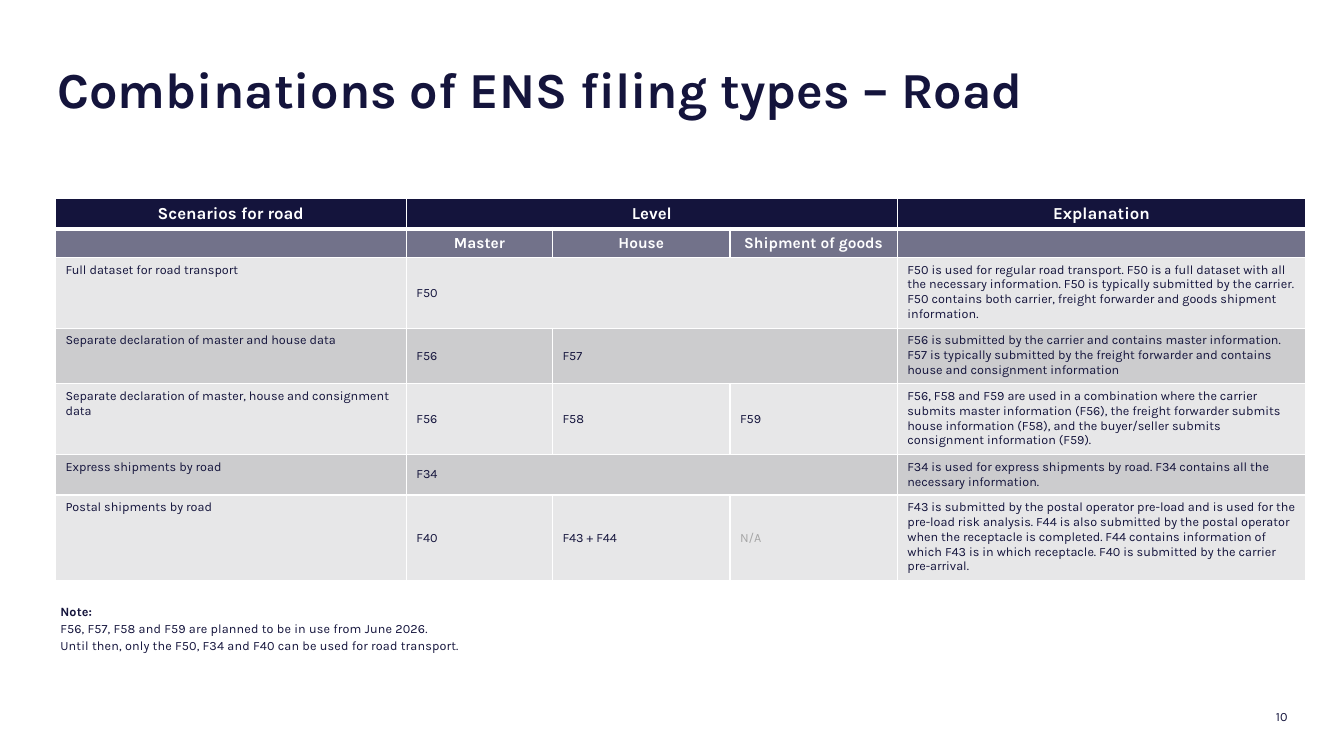
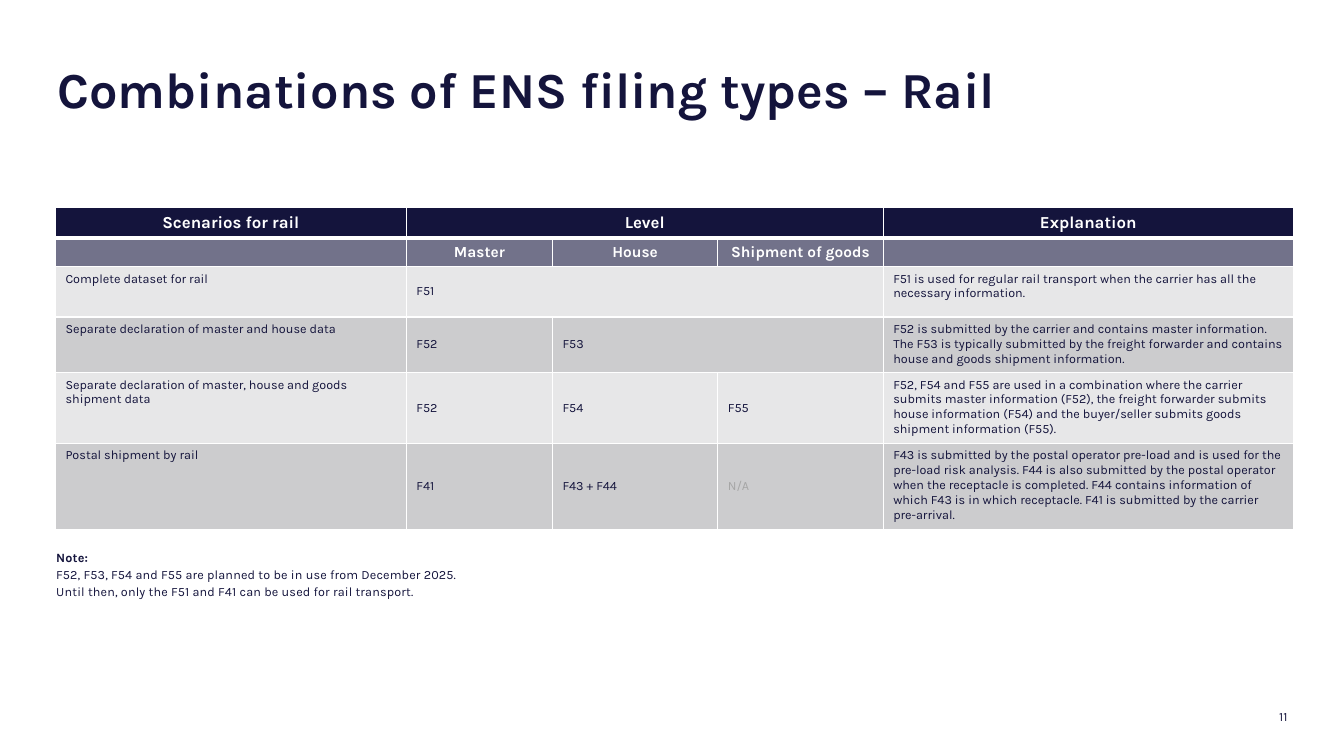
import pptx
import pptx.util
import pptx.dml.color
import pptx.enum.text
import pptx.oxml.ns
from lxml import etree

Inches, Pt = pptx.util.Inches, pptx.util.Pt
ALIGN, ANCHOR = pptx.enum.text.PP_ALIGN, pptx.enum.text.MSO_ANCHOR
qn = pptx.oxml.ns.qn

FONT = "Karla"
COLORS = {"navy": "14143C", "slate": "72728A", "light": "E7E7E8",
          "grey": "CCCCCE", "muted": "A6A6A6", "white": "FFFFFF"}
LEVELS = ("Master", "House", "Shipment of goods")

# Each row: scenario, codes per level (the last code spans what is left), explanation
SLIDES = [
    {
        "title": "Combinations of ENS filing types – Road",
        "number": "10",
        "scenarios": "Scenarios for road",
        "table_at": (0.55, 1.97),
        "columns": (3.48, 1.45, 1.76, 1.66, 4.05),
        "heights": (0.29, 0.28, 0.68, 0.54, 0.68, 0.39, 0.83),
        "rows": [
            ("Full dataset for road transport", ("F50",),
             "F50 is used for regular road transport. F50 is a full dataset with all the necessary "
             "information. F50 is typically submitted by the carrier. F50 contains both carrier, "
             "freight forwarder and goods shipment information."),
            ("Separate declaration of master and house data", ("F56", "F57"),
             "F56 is submitted by the carrier and contains master information. F57 is typically "
             "submitted by the freight forwarder and contains house and consignment information"),
            ("Separate declaration of master, house and consignment data", ("F56", "F58", "F59"),
             "F56, F58 and F59 are used in a combination where the carrier submits master "
             "information (F56), the freight forwarder submits house information (F58), and the "
             "buyer/seller submits consignment information (F59)."),
            ("Express shipments by road", ("F34",),
             "F34 is used for express shipments by road. F34 contains all the necessary information."),
            ("Postal shipments by road", ("F40", "F43 + F44", "N/A"),
             "F43 is submitted by the postal operator pre-load and is used for the pre-load risk "
             "analysis. F44 is also submitted by the postal operator when the receptacle is "
             "completed. F44 contains information of which F43 is in which receptacle. F40 is "
             "submitted by the carrier pre-arrival."),
        ],
        "note_box": (0.5, 5.93, 6.54, 0.82),
        "note": ["F56, F57, F58 and F59 are planned to be in use from June 2026.",
                 "Until then, only the F50, F34 and F40 can be used for road transport."],
    },
    {
        "title": "Combinations of ENS filing types – Rail",
        "number": "11",
        "scenarios": "Scenarios for rail",
        "table_at": (0.55, 2.06),
        "columns": (3.48, 1.45, 1.64, 1.64, 4.07),
        "heights": (0.29, 0.28, 0.5, 0.54, 0.68, 0.83),
        "rows": [
            ("Complete dataset for rail", ("F51",),
             "F51 is used for regular rail transport when the carrier has all the necessary "
             "information."),
            ("Separate declaration of master and house data", ("F52", "F53"),
             "F52 is submitted by the carrier and contains master information. The F53 is typically "
             "submitted by the freight forwarder and contains house and goods shipment information."),
            ("Separate declaration of master, house and goods shipment data", ("F52", "F54", "F55"),
             "F52, F54 and F55 are used in a combination where the carrier submits master "
             "information (F52), the freight forwarder submits house information (F54) and the "
             "buyer/seller submits goods shipment information (F55)."),
            ("Postal shipment by rail", ("F41", "F43 + F44", "N/A"),
             "F43 is submitted by the postal operator pre-load and is used for the pre-load risk "
             "analysis. F44 is also submitted by the postal operator when the receptacle is "
             "completed. F44 contains information of which F43 is in which receptacle. F41 is "
             "submitted by the carrier pre-arrival."),
        ],
        "note_box": (0.46, 5.39, 6.54, 1.11),
        "note": ["F52, F53, F54 and F55 are planned to be in use from December 2025.",
                 "Until then, only the F51 and F41 can be used for rail transport."],
    },
]


def rgb(name):
    return pptx.dml.color.RGBColor.from_string(COLORS[name])


def style(p, size, color="navy", bold=False, align=ALIGN.LEFT):
    p.alignment = align
    p.font.name, p.font.size, p.font.bold = FONT, Pt(size), bold
    p.font.color.rgb = rgb(color)


def add_text(slide, box, lines, size, bold_lines=0, align=ALIGN.LEFT,
             anchor=ANCHOR.TOP, spacing=None, inset=True):
    tf = slide.shapes.add_textbox(*map(Inches, box)).text_frame
    tf.word_wrap, tf.vertical_anchor = True, anchor
    if not inset:
        tf.margin_left = tf.margin_top = tf.margin_right = tf.margin_bottom = 0
    for i, line in enumerate(lines):
        p = tf.add_paragraph() if i else tf.paragraphs[0]
        p.text = line
        style(p, size, bold=i < bold_lines, align=align)
        if spacing:
            p.line_spacing = spacing
    return tf


def set_borders(cell, top, bottom):
    tc_pr = cell._tc.get_or_add_tcPr()
    for side, width in (("L", 1), ("R", 1), ("T", top), ("B", bottom)):
        ln = etree.SubElement(tc_pr, qn("a:ln" + side), w=str(Pt(width)))
        fill = etree.SubElement(ln, qn("a:solidFill"))
        etree.SubElement(fill, qn("a:srgbClr"), val=COLORS["white"])


def add_filing_table(slide, data):
    rows = [(data["scenarios"], ("Level",), "Explanation"), ("", LEVELS, "")] + data["rows"]
    left, top = data["table_at"]
    table = slide.shapes.add_table(
        len(rows), len(data["columns"]), Inches(left), Inches(top),
        Inches(sum(data["columns"])), Inches(sum(data["heights"]))).table
    table.horz_banding = False
    for column, width in zip(table.columns, data["columns"]):
        column.width = Inches(width)
    for row, height in zip(table.rows, data["heights"]):
        row.height = Inches(height)

    for i, (scenario, codes, explanation) in enumerate(rows):
        header = i < 2
        fill = ("navy", "slate")[i] if header else ("light", "grey")[i % 2]
        size = (12, 11)[i] if header else 9
        blanks = ("",) * (len(LEVELS) - len(codes))
        for j, text in enumerate((scenario, *codes, *blanks, explanation)):
            cell = table.cell(i, j)
            set_borders(cell, 3 if i == 1 else 1, 3 if i == 0 else 1)
            cell.fill.solid()
            cell.fill.fore_color.rgb = rgb(fill)
            is_code = 1 <= j <= len(LEVELS)
            middle = i == 0 or (not header and is_code)
            cell.vertical_anchor = ANCHOR.MIDDLE if middle else ANCHOR.TOP
            p = cell.text_frame.paragraphs[0]
            color = "white" if header else "muted" if text == "N/A" else "navy"
            if text:
                p.text = text
            style(p, size, color, header, ALIGN.CENTER if header else ALIGN.LEFT)
            if not text:  # keeps empty cells from stretching the row
                etree.SubElement(p._p, qn("a:endParaRPr"), sz=str(size * 100))
        if blanks:
            table.cell(i, len(codes)).merge(table.cell(i, len(LEVELS)))


def build_slide(prs, data):
    slide = prs.slides.add_slide(prs.slide_layouts[6])
    # Title and page number
    title = add_text(slide, (0.57, 0.65, 12.2, 0.57), [data["title"]], 36,
                     bold_lines=1, spacing=0.89, inset=False)
    title.word_wrap = True
    add_text(slide, (11.04, 7.03, 1.73, 0.15), [data["number"]], 9,
             align=ALIGN.RIGHT, anchor=ANCHOR.BOTTOM, inset=False)
    # Table and note
    add_filing_table(slide, data)
    note = add_text(slide, data["note_box"], ["Note:"] + data["note"], 9,
                    bold_lines=1, spacing=1.11)
    for p in note.paragraphs:
        p._p.pPr.find(qn("a:defRPr")).set("spc", "10")


def main():
    prs = pptx.Presentation()
    prs.slide_width, prs.slide_height = Inches(13.33), Inches(7.5)
    for data in SLIDES:
        build_slide(prs, data)
    prs.save("out.pptx")


if __name__ == "__main__":
    main()
